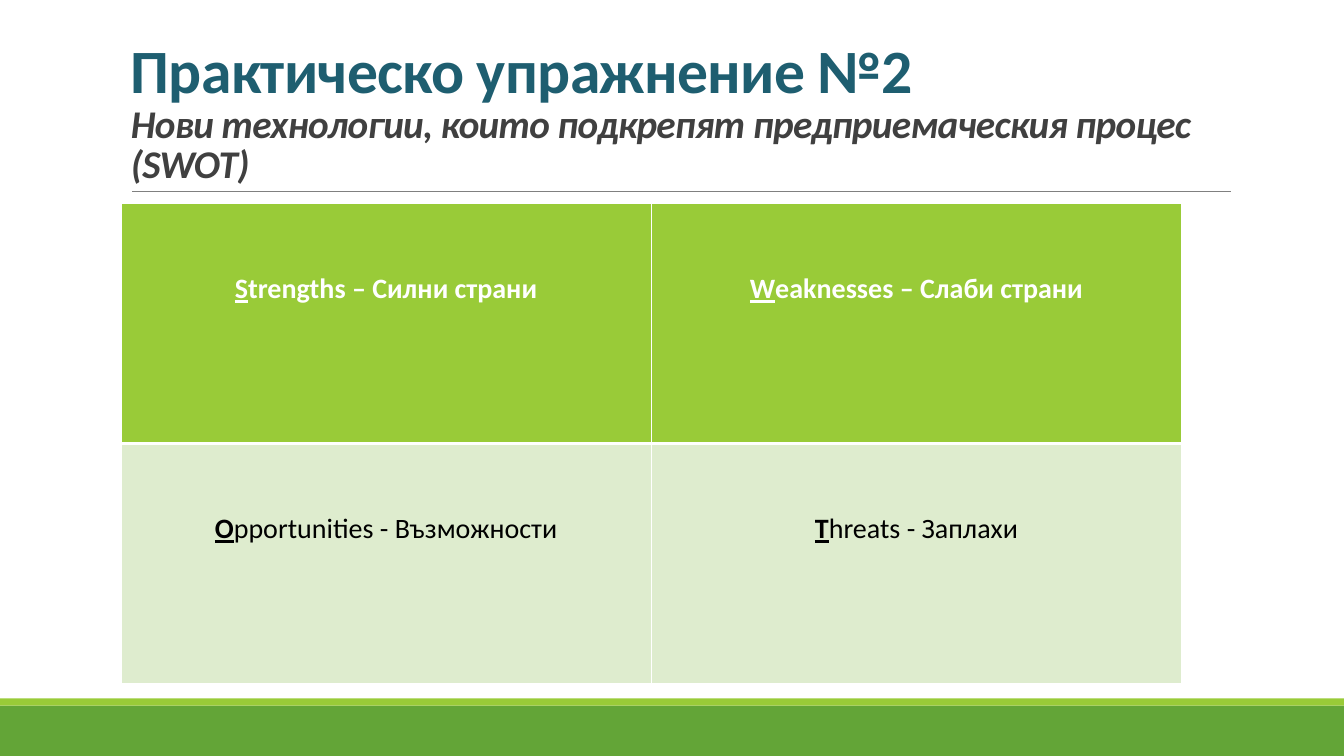
import pptx
import pptx.dml.color
import pptx.enum.shapes
import pptx.enum.text
import pptx.oxml
import pptx.oxml.ns
import pptx.util

Inches = pptx.util.Inches
Pt = pptx.util.Pt

FONT = "Calibri"
COLORS = {
    "green": "63A537", "lime": "99CB38", "pale": "DEECCE", "teal": "1E5E70",
    "dark": "404040", "gray": "808080", "white": "FFFFFF", "black": "000000",
}
TITLE_LINES = [
    ("Практическо упражнение №2", 44, "teal", False),
    ("Нови технологии, които подкрепят предприемаческия процес (SWOT)", 28, "dark", True),
]
SWOT_ROWS = [
    {"cells": ["Strengths – Силни страни", "Weaknesses – Слаби страни"],
     "fill": "lime", "color": "white", "bold": True, "bottom": 3},
    {"cells": ["Opportunities - Възможности", "Threats - Заплахи"],
     "fill": "pale", "color": "black", "bold": False, "bottom": 1},
]
FOOTER_BANDS = [(7, 0.5, "green"), (6.93, 0.07, "lime")]
SLIDE_WIDTH, SLIDE_HEIGHT = 13.33, 7.5
TABLE_LEFT, TABLE_TOP = 1.2, 2.02
COLUMN_WIDTH, ROW_HEIGHT = 5.26, 2.38


def rgb(name):
    return pptx.dml.color.RGBColor.from_string(COLORS[name])


def style_run(run, size, color, bold):
    run.font.name = FONT
    run.font.size = Pt(size)
    run.font.bold = bold
    run.font.color.rgb = rgb(color)


def add_footer(slide):
    for top, height, color in FOOTER_BANDS:
        band = slide.shapes.add_shape(
            pptx.enum.shapes.MSO_SHAPE.RECTANGLE,
            0, Inches(top), Inches(SLIDE_WIDTH), Inches(height))
        band.shadow.inherit = False
        band.fill.solid()
        band.fill.fore_color.rgb = rgb(color)
        band.line.fill.background()


def add_title_rule(slide):
    rule = slide.shapes.add_connector(
        pptx.enum.shapes.MSO_CONNECTOR.STRAIGHT,
        Inches(1.31), Inches(1.9), Inches(12.21), Inches(1.9))
    rule.line.color.rgb = rgb("gray")
    rule.line.width = Pt(0.5)
    properties = rule.element.spPr
    properties.append(properties.makeelement(pptx.oxml.ns.qn("a:effectLst"), {}))


def add_title(slide):
    box = slide.shapes.add_textbox(Inches(1.2), Inches(0.31), Inches(11.78), Inches(1.59))
    frame = box.text_frame
    frame.word_wrap = True
    frame.vertical_anchor = pptx.enum.text.MSO_ANCHOR.BOTTOM
    frame.text = "\n".join(line[0] for line in TITLE_LINES)
    for paragraph, (_, size, color, italic) in zip(frame.paragraphs, TITLE_LINES):
        paragraph.line_spacing = 0.85
        run = paragraph.runs[0]
        style_run(run, size, color, True)
        run.font.italic = italic
        run.font._element.set("spc", "-50")


def set_borders(cell, bottom):
    properties = cell._tc.get_or_add_tcPr()
    for side, width in (("L", 1), ("R", 1), ("T", 1), ("B", bottom)):
        properties.append(pptx.oxml.parse_xml(
            f'<a:ln{side} {pptx.oxml.ns.nsdecls("a")} w="{Pt(width)}"><a:solidFill>'
            f'<a:srgbClr val="{COLORS["white"]}"/></a:solidFill></a:ln{side}>'))


def fill_cell(cell, label, row):
    set_borders(cell, row["bottom"])
    cell.fill.solid()
    cell.fill.fore_color.rgb = rgb(row["fill"])
    cell.margin_left = cell.margin_right = Inches(0.07)
    cell.margin_top, cell.margin_bottom = Inches(0.68), 0
    paragraph = cell.text_frame.paragraphs[0]
    paragraph.text = label[0]
    paragraph.alignment = pptx.enum.text.PP_ALIGN.CENTER
    initial = paragraph.runs[0]
    style_run(initial, 20, row["color"], True)
    initial.font.underline = True
    rest = paragraph.add_run()
    rest.text = label[1:]
    style_run(rest, 20, row["color"], row["bold"])


def add_swot_table(slide):
    row_count, column_count = len(SWOT_ROWS), len(SWOT_ROWS[0]["cells"])
    table = slide.shapes.add_table(
        row_count, column_count, Inches(TABLE_LEFT), Inches(TABLE_TOP),
        Inches(COLUMN_WIDTH * column_count), Inches(ROW_HEIGHT * row_count)).table
    for row_index, row in enumerate(SWOT_ROWS):
        for column_index, label in enumerate(row["cells"]):
            fill_cell(table.cell(row_index, column_index), label, row)


def main():
    presentation = pptx.Presentation()
    presentation.slide_width = Inches(SLIDE_WIDTH)
    presentation.slide_height = Inches(SLIDE_HEIGHT)
    slide = presentation.slides.add_slide(presentation.slide_layouts[6])
    add_footer(slide)
    add_title_rule(slide)
    add_title(slide)
    add_swot_table(slide)
    presentation.save("out.pptx")


if __name__ == "__main__":
    main()
